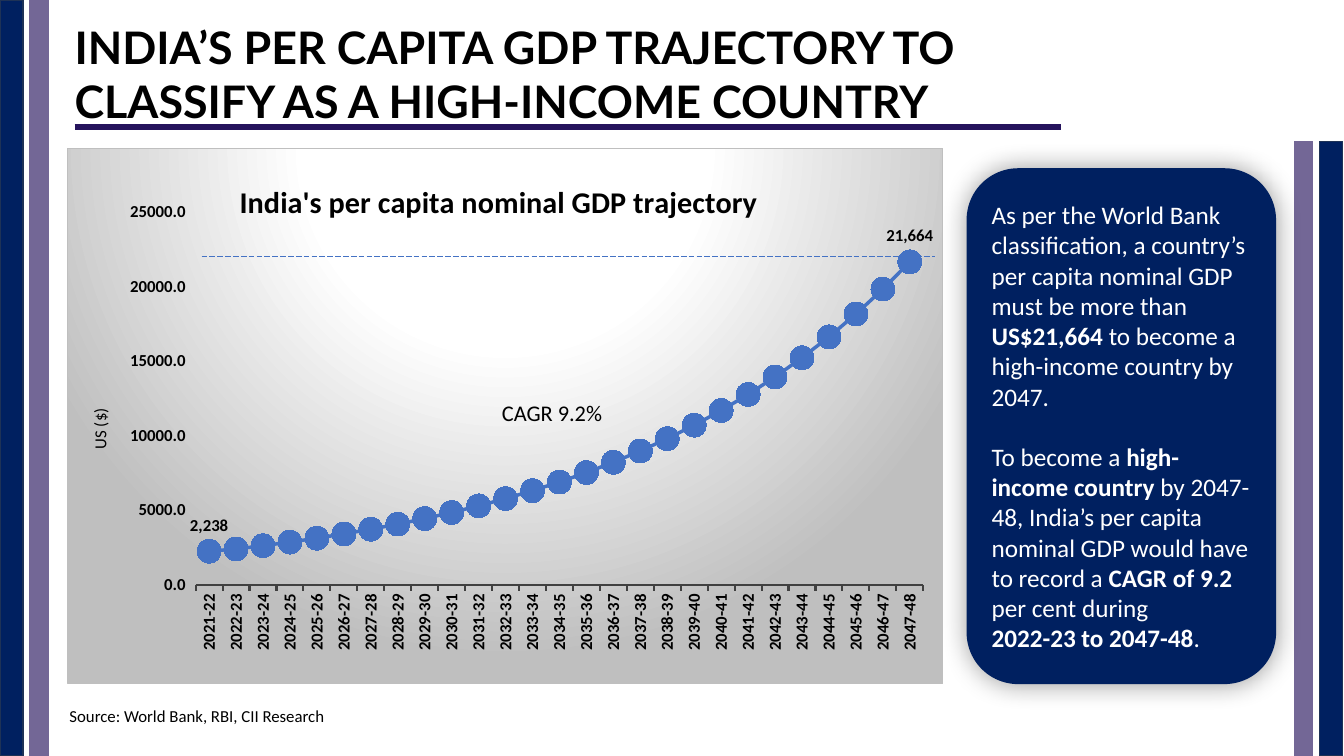
from dataclasses import dataclass

from lxml import etree
from pptx import Presentation
from pptx.chart.data import CategoryChartData
from pptx.dml.color import RGBColor
from pptx.enum.chart import XL_CHART_TYPE, XL_LABEL_POSITION, XL_MARKER_STYLE, XL_TICK_MARK
from pptx.enum.dml import MSO_LINE
from pptx.enum.shapes import MSO_CONNECTOR, MSO_SHAPE
from pptx.enum.text import MSO_ANCHOR, MSO_AUTO_SIZE, PP_ALIGN
from pptx.oxml import parse_xml
from pptx.oxml.ns import nsdecls, qn
from pptx.util import Cm, Pt

LINE_MARKERS = XL_CHART_TYPE.LINE_MARKERS
ABOVE = XL_LABEL_POSITION.ABOVE
CIRCLE = XL_MARKER_STYLE.CIRCLE
TICK_OUT, TICK_NONE = XL_TICK_MARK.OUTSIDE, XL_TICK_MARK.NONE
LONG_DASH = MSO_LINE.LONG_DASH
STRAIGHT = MSO_CONNECTOR.STRAIGHT
RECT, ROUND_RECT = MSO_SHAPE.RECTANGLE, MSO_SHAPE.ROUNDED_RECTANGLE
MIDDLE, LEFT, NO_FIT = MSO_ANCHOR.MIDDLE, PP_ALIGN.LEFT, MSO_AUTO_SIZE.NONE


@dataclass(frozen=True)
class Theme:
    navy: str = "002060"
    navy_edge: str = "1E3256"
    purple: str = "736796"
    rule: str = "26145D"
    blue: str = "4472C4"
    axis: str = "404040"
    grey: str = "BFBFBF"
    black: str = "000000"
    white: str = "FFFFFF"
    head_font: str = "Lato"
    body_font: str = "Calibri"
    title: float = 32
    chart_title: float = 21.6
    body: float = 18
    note: float = 16
    small: float = 12
    chart: float = 10


T = Theme()
GDP = [2238, 2389, 2609, 2849, 3112, 3399, 3712, 4055, 4429, 4837, 5283, 5770, 6302, 6883,
       7518, 8211, 8968, 9795, 10698, 11685, 12762, 13939, 15224, 16628, 18161, 19835, 21664]
YEARS = [f"{2021 + i}-{22 + i}" for i in range(len(GDP))]
CALLOUT = [
    [("As per the World Bank classification, a country’s per capita nominal GDP must be more than ", False),
     ("US$21,664 ", True), ("to become a high-income country by 2047.", False)],
    [("To become a ", False), ("high-income country ", True),
     ("by 2047-48, India’s per capita nominal GDP would have to record a ", False),
     ("CAGR of 9.2 ", True), ("per cent during", False)],
    [("2022-23 to 2047-48", True), (".", False)],
]


def rgb(value):
    return RGBColor.from_string(value)


def style(font, size, color=T.black, bold=False, name=T.body_font):
    font.name, font.size, font.bold = name, Pt(size), bold
    font.color.rgb = rgb(color)


def add_bar(slide, x, y, w, h, fill, edge):
    sp = slide.shapes.add_shape(RECT, Cm(x), Cm(y), Cm(w), Cm(h))
    sp.shadow.inherit = False
    sp.fill.solid()
    sp.fill.fore_color.rgb = rgb(fill)
    sp.line.color.rgb = rgb(edge)
    sp.line.width = Pt(1)


def add_side_bars(slide, x, y, w, h, mirrored=False):
    """Put the navy bar at the outer edge and the purple bar at the inner one."""
    navy_w, purple_w = 0.58, 0.46
    navy_x, purple_x = (x + w - navy_w, x) if mirrored else (x, x + w - purple_w)
    add_bar(slide, navy_x, y, navy_w, h, T.navy, T.navy_edge)
    add_bar(slide, purple_x, y, purple_w, h, T.purple, T.purple)


def add_line(slide, x, y, w, color, width, dash=None):
    line = slide.shapes.add_connector(STRAIGHT, Cm(x), Cm(y), Cm(x + w), Cm(y))
    line.line.color.rgb = rgb(color)
    line.line.width = Pt(width)
    if dash:
        line.line.dash_style = dash
    etree.SubElement(line._element.spPr, qn("a:effectLst"))


def add_text(slide, x, y, w, h, text, size):
    tf = slide.shapes.add_textbox(Cm(x), Cm(y), Cm(w), Cm(h)).text_frame
    tf.word_wrap = True
    tf.text = text
    style(tf.paragraphs[0].runs[0].font, size)


def add_heading(slide, x, y, w, h):
    title = slide.shapes.title
    title.left, title.top, title.width, title.height = Cm(x), Cm(y), Cm(w), Cm(h)
    tf = title.text_frame
    tf.text = "INDIA’S PER CAPITA GDP TRAJECTORY TO CLASSIFY AS A HIGH-INCOME COUNTRY"
    tf.word_wrap, tf.auto_size, tf.vertical_anchor = True, NO_FIT, MIDDLE
    tf.margin_left = tf.margin_top = tf.margin_right = tf.margin_bottom = 0
    p = tf.paragraphs[0]
    p.alignment = LEFT
    style(p.runs[0].font, T.title, bold=True, name=T.head_font)
    add_line(slide, x, y + h + 0.15, w - 0.35, T.rule, 4.5)


def set_layout(parent, **parts):
    """Give a chart part a manual layout in fractions of the chart."""
    layout = parent.find(qn("c:layout"))
    if layout is None:
        layout = etree.Element(qn("c:layout"))
        tx = parent.find(qn("c:tx"))
        parent.insert(0 if tx is None else 1, layout)
    manual = etree.SubElement(layout, qn("c:manualLayout"))
    values = {"xMode": "edge", "yMode": "edge", **parts}
    if "w" in parts:
        values = {"layoutTarget": "inner", **values}
    for name, value in values.items():
        etree.SubElement(manual, qn(f"c:{name}")).set("val", str(value))


def fill_chart_area(chart):
    space = chart._chartSpace
    stops = "".join(f'<a:gs pos="{pos}"><a:srgbClr val="{color}"/></a:gs>'
                    for pos, color in ((0, T.white), (39000, T.white), (100000, T.grey)))
    space.find(qn("c:chart")).addnext(parse_xml(
        f'<c:spPr {nsdecls("c", "a")}><a:gradFill><a:gsLst>{stops}</a:gsLst><a:path path="circle">'
        '<a:fillToRect l="50000" t="-80000" r="50000" b="180000"/></a:path></a:gradFill>'
        f'<a:ln w="9525"><a:solidFill><a:srgbClr val="{T.grey}"/></a:solidFill></a:ln></c:spPr>'))


def format_axes(chart):
    cat, val = chart.category_axis, chart.value_axis
    for axis in (cat, val):
        axis.has_major_gridlines = False
        axis.major_tick_mark, axis.minor_tick_mark = TICK_OUT, TICK_NONE
        style(axis.tick_labels.font, T.small, bold=True)
    cat.format.line.color.rgb = rgb(T.axis)
    cat.format.line.width = Pt(1.5)
    cat._element.find(qn("c:txPr")).find(qn("a:bodyPr")).set("rot", "-5400000")
    val.format.line.fill.background()
    val.minimum_scale, val.maximum_scale, val.major_unit = 0, 25000, 5000
    val.tick_labels.number_format, val.tick_labels.number_format_is_linked = "0.0", False
    tf = val.axis_title.text_frame
    tf.text = "US ($)"
    tf._txBody.find(qn("a:bodyPr")).set("rot", "-5400000")
    style(tf.paragraphs[0].runs[0].font, T.small)
    set_layout(val.axis_title._element, x=0.02, y=0.48)


def format_series(series):
    series.smooth = False
    series.format.line.color.rgb = rgb(T.blue)
    series.format.line.width = Pt(2.5)
    marker = series.marker
    marker.style, marker.size = CIRCLE, 17
    marker.format.fill.solid()
    marker.format.fill.fore_color.rgb = rgb(T.blue)
    marker.format.line.color.rgb = rgb(T.blue)
    labels = series.data_labels
    labels.show_value, labels.position = True, ABOVE
    labels.number_format, labels.number_format_is_linked = "#,##0", False
    style(labels.font, T.small, bold=True)
    for i in range(1, len(GDP) - 1):  # only the first and last points keep a label
        hidden = etree.Element(qn("c:dLbl"))
        etree.SubElement(hidden, qn("c:idx")).set("val", str(i))
        etree.SubElement(hidden, qn("c:delete")).set("val", "1")
        labels._element.insert(i - 1, hidden)


def add_gdp_chart(slide, x, y, w, h):
    data = CategoryChartData()
    data.categories = YEARS
    data.add_series("Series 1", GDP)
    chart = slide.shapes.add_chart(LINE_MARKERS, Cm(x), Cm(y), Cm(w), Cm(h), data).chart
    style(chart.font, T.chart)
    chart.has_legend = False
    chart.plots[0].vary_by_categories = False
    tf = chart.chart_title.text_frame
    tf.text = "India's per capita nominal GDP trajectory"
    style(tf.paragraphs[0].runs[0].font, T.chart_title, bold=True)
    set_layout(chart.chart_title._element, x=0.19, y=0.05)
    set_layout(chart._chartSpace.find(f".//{qn('c:plotArea')}"), x=0.146, y=0.119, w=0.832, h=0.696)
    fill_chart_area(chart)
    format_axes(chart)
    format_series(chart.plots[0].series[0])
    add_line(slide, x + 3.38, y + 2.72, 18.49, T.blue, 0.5, LONG_DASH)
    add_text(slide, x + 10.7, y + 6.2, 4.52, 0.94, "CAGR 9.2%", T.note)


def add_callout(slide, x, y, w, h):
    sp = slide.shapes.add_shape(ROUND_RECT, Cm(x), Cm(y), Cm(w), Cm(h))
    sp.fill.solid()
    sp.fill.fore_color.rgb = rgb(T.navy)
    sp.line.fill.background()
    sp.shadow.inherit = False
    sp._element.spPr.find(qn("a:effectLst")).append(parse_xml(
        f'<a:outerShdw {nsdecls("a")} blurRad="{Pt(19)}" dist="0" dir="0" algn="ctr" rotWithShape="0">'
        f'<a:srgbClr val="{T.black}"><a:alpha val="40000"/></a:srgbClr></a:outerShdw>'))
    tf = sp.text_frame
    tf.word_wrap, tf.vertical_anchor = True, MIDDLE
    for i, runs in enumerate(CALLOUT):
        p = tf.add_paragraph() if i else tf.paragraphs[0]
        p.alignment = LEFT
        for text, bold in runs:
            r = p.add_run()
            r.text = text
            style(r.font, T.body, T.white, bold)
    tf.paragraphs[1].space_before = Pt(21.6)


def main():
    prs = Presentation()
    prs.slide_width, prs.slide_height = Cm(33.87), Cm(19.05)
    slide = prs.slides.add_slide(prs.slide_layouts[5])
    add_side_bars(slide, 0, 0, 1.22, 19.05)
    add_side_bars(slide, 32.62, 3.56, 1.22, 15.49, mirrored=True)
    add_heading(slide, 1.88, 0.64, 25.22, 2.41)
    add_gdp_chart(slide, 1.7, 3.73, 22.07, 13.51)
    add_callout(slide, 24.36, 4.24, 7.8, 13)
    add_text(slide, 1.5, 17.65, 15.09, 0.76, "Source: World Bank, RBI, CII Research", T.small)
    prs.save("out.pptx")


if __name__ == "__main__":
    main()
